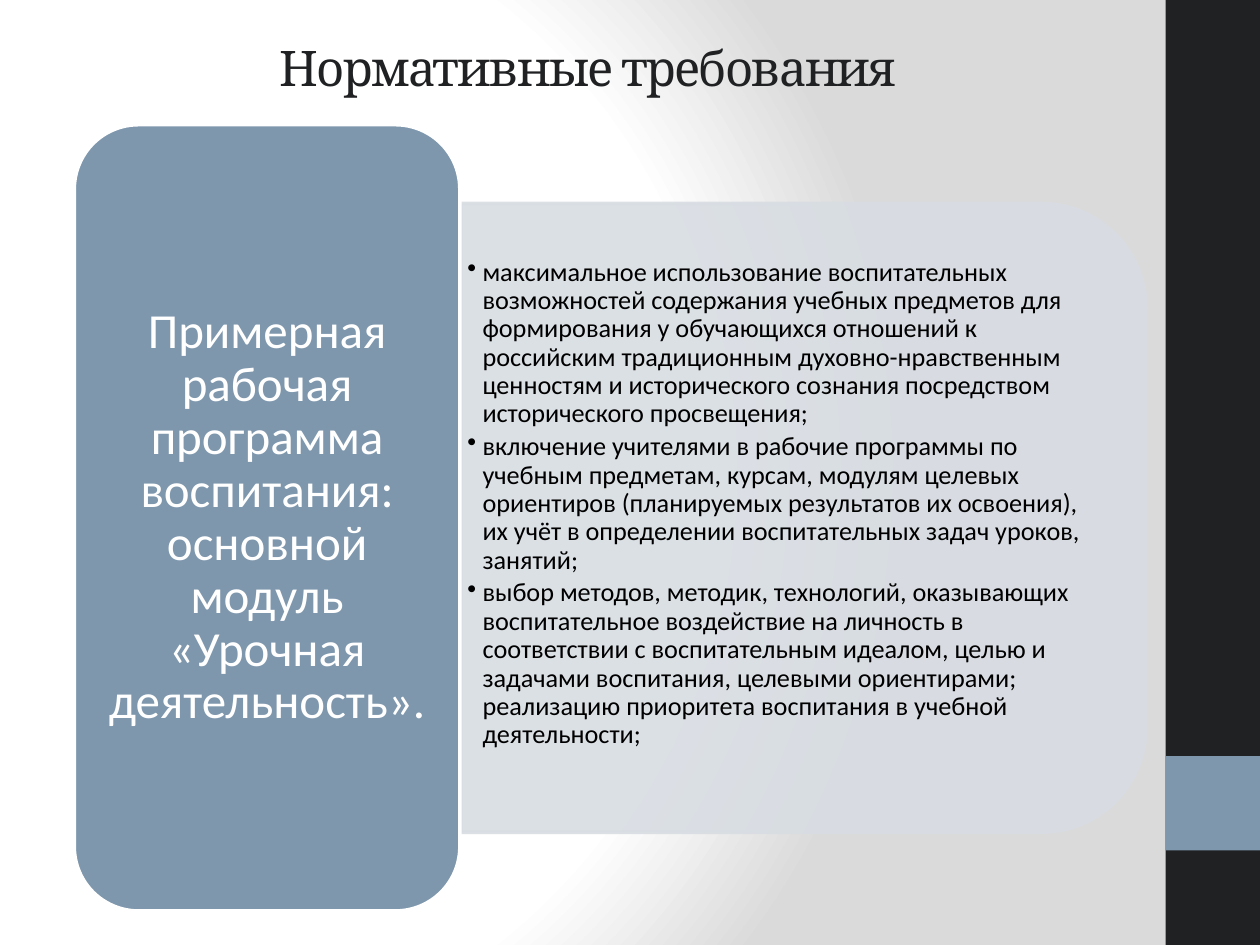
import pptx
import pptx.dml.color
import pptx.enum.shapes
import pptx.enum.text
import pptx.oxml
import pptx.oxml.ns
import pptx.util
from pptx.util import Inches

DARK, BLUE, PALE, WHITE, BLACK = "1F2123", "7E97AD", "D8DDE3", "FFFFFF", "000000"
SHAPE = pptx.enum.shapes.MSO_SHAPE
ALIGN = pptx.enum.text.PP_ALIGN

MODULE = "Примерная рабочая программа воспитания: основной модуль «Урочная деятельность»."
REQUIREMENTS = [
    "максимальное использование воспитательных возможностей содержания учебных предметов "
    "для формирования у обучающихся отношений к российским традиционным "
    "духовно-нравственным ценностям и исторического сознания посредством "
    "исторического просвещения;",
    "включение учителями в рабочие программы по учебным предметам, курсам, модулям "
    "целевых ориентиров (планируемых результатов их освоения), их учёт в определении "
    "воспитательных задач уроков, занятий;",
    "выбор методов, методик, технологий, оказывающих воспитательное воздействие на "
    "личность в соответствии с воспитательным идеалом, целью и задачами воспитания, "
    "целевыми ориентирами; реализацию приоритета воспитания в учебной деятельности;",
]


def rgb(color):
    return pptx.dml.color.RGBColor.from_string(color)


def add_xml(parent, tag, **attributes):
    child = pptx.oxml.parse_xml(f"<a:{tag} {pptx.oxml.ns.nsdecls('a')}/>")
    for name, value in attributes.items():
        child.set(name, str(value))
    parent.append(child)
    return child


class Slide:
    heading_font = "Cambria"
    body_font = "Calibri"

    def __init__(self, deck):
        self.page = deck.slides.add_slide(deck.slide_layouts[5])

    def background(self, stops):
        """Radial gradient; stops are (percent, colour) pairs."""
        fill = self.page.background.fill
        fill.gradient()
        gradient = self.page.background._cSld.find(".//" + pptx.oxml.ns.qn("a:gradFill"))
        for child in list(gradient):
            gradient.remove(child)
        stop_list = add_xml(gradient, "gsLst")
        for percent, color in stops:
            add_xml(add_xml(stop_list, "gs", pos=percent * 1000), "srgbClr", val=color)
        circle = add_xml(gradient, "path", path="circle")
        add_xml(circle, "fillToRect", l=20000, t=50000, r=100000, b=50000)

    def title(self, text, left, top, width, height):
        box = self.page.shapes.title
        box.left, box.top, box.width, box.height = map(Inches, (left, top, width, height))
        frame = box.text_frame
        frame.text = text
        frame.auto_size = pptx.enum.text.MSO_AUTO_SIZE.NONE
        frame.vertical_anchor = pptx.enum.text.MSO_ANCHOR.MIDDLE
        para = frame.paragraphs[0]
        para.alignment = ALIGN.CENTER
        span = para.runs[0]
        self.font(span.font, 28, DARK, self.heading_font)
        span.font._element.set("spc", "-100")

    def font(self, font, size, color, name):
        font.size, font.name = pptx.util.Pt(size), name
        font.color.rgb = rgb(color)

    def shape(self, kind, left, top, width, height, fill, line=None, opacity=100, rotation=0):
        shape = self.page.shapes.add_shape(kind, *map(Inches, (left, top, width, height)))
        shape.shadow.inherit = False
        shape.rotation = rotation
        shape.fill.solid()
        shape.fill.fore_color.rgb = rgb(fill)
        if line:
            shape.line.color.rgb = rgb(line)
            shape.line.width = pptx.util.Pt(2)
        else:
            shape.line.fill.background()
        if opacity < 100:
            for color in shape._element.spPr.iter(pptx.oxml.ns.qn("a:srgbClr")):
                add_xml(color, "alpha", val=opacity * 1000)

    def text(self, paragraphs, left, top, width, height, insets, size, color,
             space_after=0, bullets=False):
        box = self.page.shapes.add_textbox(*map(Inches, (left, top, width, height)))
        frame = box.text_frame
        frame.word_wrap = True
        frame.vertical_anchor = pptx.enum.text.MSO_ANCHOR.MIDDLE
        (frame.margin_left, frame.margin_top,
         frame.margin_right, frame.margin_bottom) = map(Inches, insets)
        frame.text = "\n".join(paragraphs)
        for para in frame.paragraphs:
            para.alignment = ALIGN.LEFT if bullets else ALIGN.CENTER
            para.line_spacing = 0.9
            para.space_after = pptx.util.Pt(space_after)
            if bullets:
                properties = para._p.get_or_add_pPr()
                properties.set("marL", str(Inches(0.12)))
                properties.set("indent", str(Inches(-0.12)))
                add_xml(properties, "buChar", char="•")
            self.font(para.font, size, color, self.body_font)


def main():
    deck = pptx.Presentation()
    deck.slide_width, deck.slide_height = Inches(10), Inches(7.5)
    slide = Slide(deck)
    slide.background([(0, WHITE), (75, WHITE), (100, "DADADA")])
    slide.shape(SHAPE.RECTANGLE, 9.25, 0, 0.75, 7.5, DARK)
    slide.shape(SHAPE.RECTANGLE, 9.25, 6, 0.75, 0.75, BLUE)
    slide.title("Нормативные требования", 0.5, 0.3, 8.33, 0.46)

    slide.shape(SHAPE.ROUND_2_SAME_RECTANGLE, 3.88, 1.39, 4.99, 5.44, PALE, PALE,
                opacity=90, rotation=90)
    slide.text(REQUIREMENTS, 3.65, 1.86, 5.2, 4.51, (0.06, 0.03, 0.06, 0.26), 15, BLACK,
               space_after=2.5, bullets=True)
    slide.shape(SHAPE.ROUNDED_RECTANGLE, 0.59, 0.99, 3.06, 6.24, BLUE, WHITE)
    slide.text([MODULE], 0.74, 1.14, 2.76, 5.94, (0.12, 0.06, 0.12, 0.06), 28, WHITE)
    deck.save("out.pptx")


if __name__ == "__main__":
    main()
